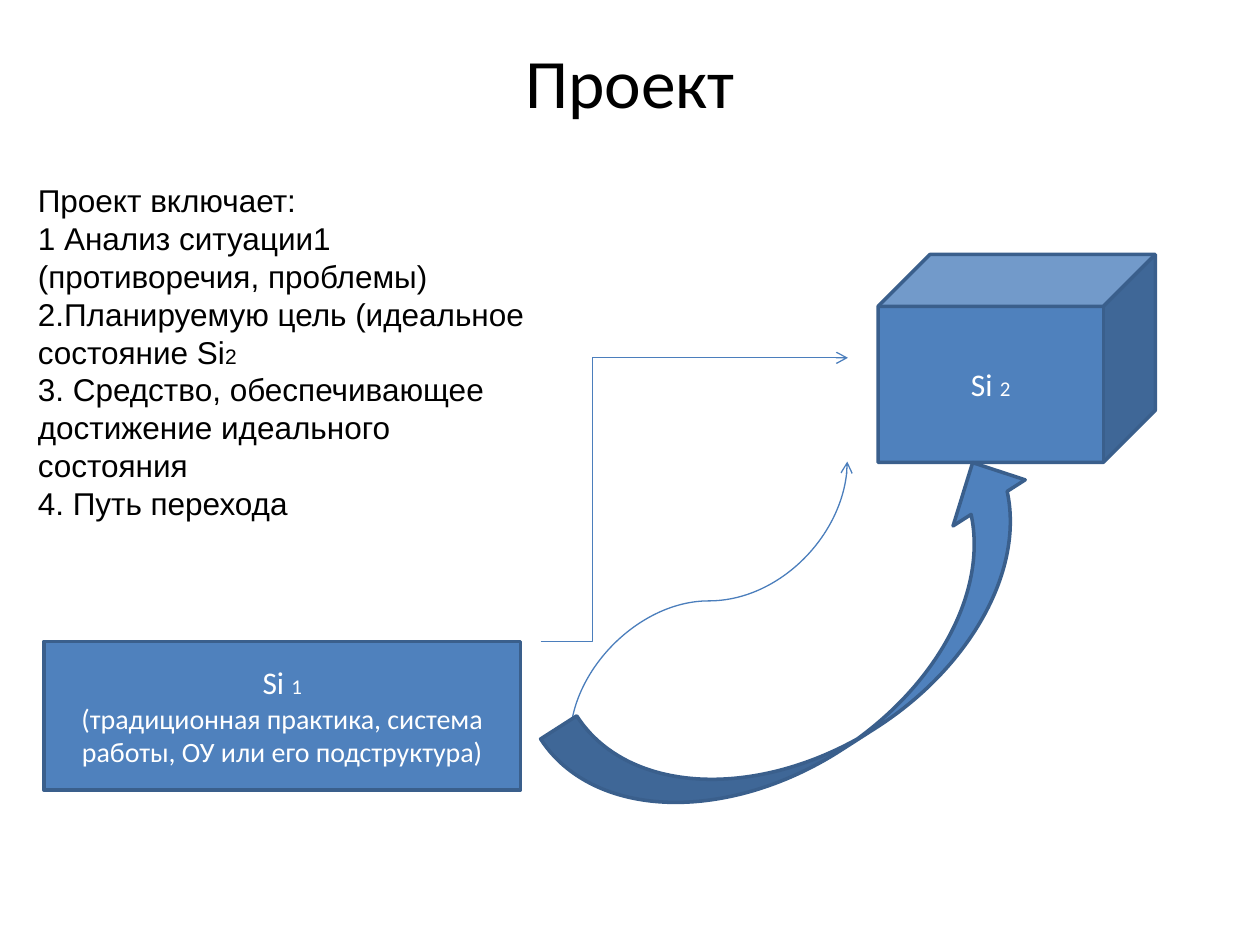
"""Build the project slide: two states joined by three transition arrows."""
import lxml.etree
import pptx
import pptx.dml.color
import pptx.enum.shapes
import pptx.enum.text
import pptx.oxml.ns
import pptx.util

Pt = pptx.util.Pt
RGBColor = pptx.dml.color.RGBColor
SHAPE = pptx.enum.shapes.MSO_SHAPE
CONNECTOR = pptx.enum.shapes.MSO_CONNECTOR
ALIGN = pptx.enum.text.PP_ALIGN
ANCHOR = pptx.enum.text.MSO_ANCHOR
AUTO_SIZE = pptx.enum.text.MSO_AUTO_SIZE
qn = pptx.oxml.ns.qn

BLUE = RGBColor(0x4F, 0x81, 0xBD)
DARK_BLUE = RGBColor(0x3A, 0x5F, 0x8C)
LINE_BLUE = RGBColor(0x4B, 0x7E, 0xBC)
BLACK = RGBColor(0, 0, 0)
WHITE = RGBColor(0xFF, 0xFF, 0xFF)

FRAME = {"word_wrap": True, "auto_size": AUTO_SIZE.NONE}
MIDDLE = {**FRAME, "vertical_anchor": ANCHOR.MIDDLE}
TOP = {**FRAME, "vertical_anchor": ANCHOR.TOP}
PARAGRAPH = {"space_before": Pt(0), "space_after": Pt(0), "line_spacing": 1.0}
CENTERED = {**PARAGRAPH, "alignment": ALIGN.CENTER}
LEFT = {**PARAGRAPH, "alignment": ALIGN.LEFT}

BODY_LINES = [
    [("Проект включает:", 18)],
    [("1 Анализ ситуации1 (противоречия, проблемы)", 18)],
    [("2.Планируемую цель (идеальное состояние Si", 18), ("2", 12)],
    [("3. Средство, обеспечивающее достижение идеального состояния", 18)],
    [("4. Путь перехода", 18)],
]
STATE_1 = [
    [("Si ", 18), ("1", 12)],
    [("(традиционная практика, система работы, ОУ или его подструктура)", 16)],
]
STATE_2 = [[("Si ", 18), ("2", 12)]]


def apply(obj, values):
    """Set each named attribute of an object."""
    for name, value in values.items():
        setattr(obj, name, value)


def write(tf, lines, font, color, frame, paragraph):
    """Fill a text frame with paragraphs of (text, size) runs."""
    apply(tf, frame)
    for i, line in enumerate(lines):
        p = tf.add_paragraph() if i else tf.paragraphs[0]
        apply(p, paragraph)
        for text, size in line:
            r = p.add_run()
            r.text = text
            apply(r.font, {"name": font, "size": Pt(size)})
            r.font.color.rgb = color


def place(sp, left, top, width, height):
    """Move and size a placeholder."""
    box = {"left": left, "top": top, "width": width, "height": height}
    apply(sp, {name: Pt(value) for name, value in box.items()})


def remove_bullets(tf):
    """Turn off bullets and hanging indents."""
    for p in tf.paragraphs:
        pPr = p._p.get_or_add_pPr()
        apply_xml = {"marL": "0", "indent": "0"}
        for name, value in apply_xml.items():
            pPr.set(name, value)
        lxml.etree.SubElement(pPr, qn("a:buNone"))


def add_block(s, kind, box, lines=(), rotation=0):
    """Add a blue outlined shape with centred text."""
    sp = s.shapes.add_shape(kind, *map(Pt, box))
    sp.shadow.inherit = False
    sp.fill.solid()
    sp.fill.fore_color.rgb = BLUE
    sp.line.color.rgb = DARK_BLUE
    sp.line.width = Pt(2)
    sp.rotation = rotation
    write(sp.text_frame, lines, "Calibri", WHITE, MIDDLE, CENTERED)


def add_arrow(s, kind, start, end, rotation=0, bend=50):
    """Add a thin connector with an open arrowhead, bent at a percentage."""
    sp = s.shapes.add_connector(kind, *map(Pt, start + end))
    sp.line.color.rgb = LINE_BLUE
    sp.line.width = Pt(0.75)
    spPr = sp.element.spPr
    spPr.find(qn("a:xfrm")).set("rot", str(rotation * 60000))
    guides = spPr.find(qn("a:prstGeom")).find(qn("a:avLst"))
    lxml.etree.SubElement(guides, qn("a:gd"), name="adj1", fmla=f"val {bend * 1000}")
    lxml.etree.SubElement(spPr.find(qn("a:ln")), qn("a:tailEnd"), type="arrow")
    lxml.etree.SubElement(spPr, qn("a:effectLst"))


def main():
    """Build and save the slide."""
    prs = pptx.Presentation()
    apply(prs, {"slide_width": Pt(720), "slide_height": Pt(540)})
    s = prs.slides.add_slide(prs.slide_layouts[1])
    title, body = s.placeholders
    place(title, 36, 21.6, 648, 49.7)
    write(title.text_frame, [[("Проект", 39.6)]], "Calibri", BLACK, MIDDLE, CENTERED)
    place(body, 14.4, 100.1, 295.2, 203.8)
    write(body.text_frame, BODY_LINES, "Arial", BLACK, TOP, LEFT)
    remove_bullets(body.text_frame)

    add_block(s, SHAPE.RECTANGLE, (25.2, 366.5, 272.2, 85), STATE_1)
    add_block(s, SHAPE.CUBE, (501.8, 145.4, 158.4, 118.8), STATE_2)
    add_arrow(s, CONNECTOR.ELBOW, (308.9, 366.5), (484.6, 204.5), bend=17)
    add_arrow(s, CONNECTOR.CURVE, (484.6, 422.6), (325.4, 264.2), rotation=90)
    add_block(s, SHAPE.CURVED_UP_ARROW, (310.3, 329, 317.5, 97.9), rotation=327.4)
    prs.save("out.pptx")


if __name__ == "__main__":
    main()
